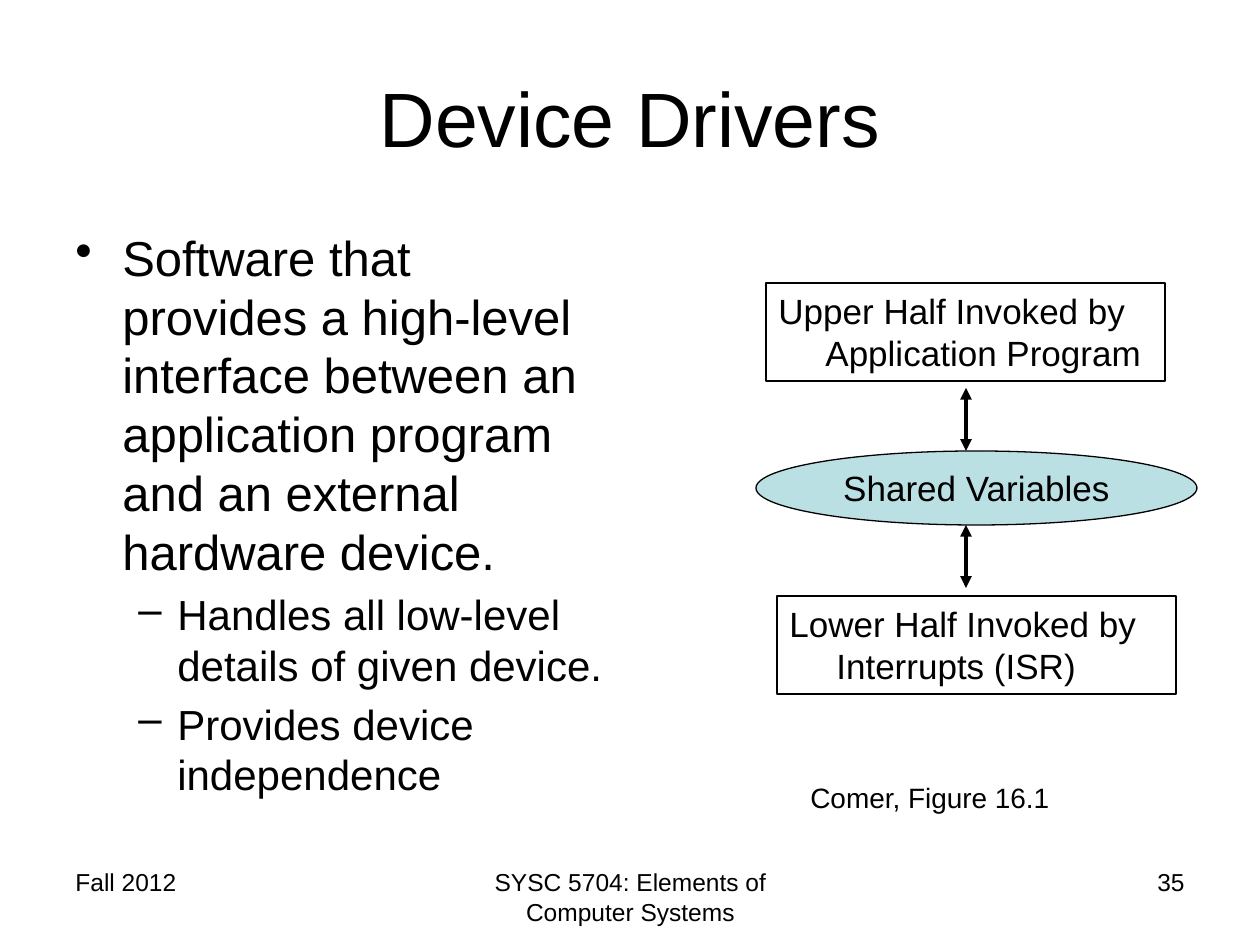
"""Build the Device Drivers slide: bullets beside a driver structure diagram."""
import pptx
import pptx.util
import pptx.dml.color
import pptx.enum.shapes
import pptx.enum.text
import pptx.oxml
import pptx.oxml.ns
from lxml import etree

PX = 914400 / 126
SHAPE = pptx.enum.shapes.MSO_SHAPE
ALIGN = pptx.enum.text.PP_ALIGN
ANCHOR = pptx.enum.text.MSO_ANCHOR
qn = pptx.oxml.ns.qn


def rgb(value):
    return pptx.dml.color.RGBColor.from_string(value)


def write(sp, paragraphs, align=ALIGN.LEFT, anchor=ANCHOR.TOP, wrap=True):
    tf = sp.text_frame
    tf.word_wrap = wrap
    tf.vertical_anchor = anchor
    for i, (text, size, left, hang, bullet, before) in enumerate(paragraphs):
        p = tf.add_paragraph() if i else tf.paragraphs[0]
        p.text = text
        p.alignment = align
        p.space_before = pptx.util.Pt(before)
        p.font.name = "Arial"
        p.font.size = pptx.util.Pt(size)
        p.font.color.rgb = rgb("000000")
        pPr = p._p.get_or_add_pPr()
        pPr.set("marL", str(int(left * PX)))
        pPr.set("indent", str(int(-hang * PX)))
        if bullet:
            bu = etree.Element(qn("a:buChar"), char=bullet)
            pPr.find(qn("a:defRPr")).addprevious(bu)


prs = pptx.Presentation()
prs.slide_width = int(1260 * PX)
prs.slide_height = int(945 * PX)
s = prs.slides.add_slide(prs.slide_layouts[6])

texts = [
    ((63, 861, 294, 66), [("Fall 2012", 14, 0, 0, "", 0)], ALIGN.LEFT, ANCHOR.TOP, True),
    ((431, 861, 399, 66), [("SYSC 5704: Elements of Computer Systems", 14, 0, 0, "", 0)],
     ALIGN.CENTER, ANCHOR.TOP, True),
    ((903, 861, 294, 66), [("35", 14, 0, 0, "", 0)], ALIGN.RIGHT, ANCHOR.TOP, True),
    ((63, 38, 1134, 158), [("Device Drivers", 44, 0, 0, "", 0)],
     ALIGN.CENTER, ANCHOR.MIDDLE, True),
    ((63, 221, 557, 624), [
        ("Software that provides a high-level interface between an application program "
         "and an external hardware device.", 28, 47, 47, "•", 0),
        ("Handles all low-level details of given device.", 24, 102, 39, "–", 5),
        ("Provides device independence", 24, 102, 39, "–", 5),
    ], ALIGN.LEFT, ANCHOR.TOP, True),
    ((798, 774, 267, 47), [("Comer, Figure 16.1", 16, 47, 47, "", 0)],
     ALIGN.LEFT, ANCHOR.TOP, False),
]
for box, paragraphs, align, anchor, wrap in texts:
    sp = s.shapes.add_textbox(*(int(v * PX) for v in box))
    write(sp, paragraphs, align, anchor, wrap)

blocks = [
    (SHAPE.RECTANGLE, (766, 283, 399, 98), "Upper Half Invoked by Application Program",
     None, ALIGN.LEFT, ANCHOR.TOP),
    (SHAPE.RECTANGLE, (777, 596, 399, 98), "Lower Half Invoked by Interrupts (ISR)",
     None, ALIGN.LEFT, ANCHOR.TOP),
    (SHAPE.OVAL, (756, 451, 441, 74), "Shared Variables",
     "BBE0E3", ALIGN.CENTER, ANCHOR.MIDDLE),
]
for kind, box, text, fill, align, anchor in blocks:
    sp = s.shapes.add_shape(kind, *(int(v * PX) for v in box))
    sp.shadow.inherit = False
    if fill:
        sp.fill.solid()
        sp.fill.fore_color.rgb = rgb(fill)
    else:
        sp.fill.background()
    sp.line.color.rgb = rgb("000000")
    sp.line.width = pptx.util.Pt(0.75)
    write(sp, [(text, 20, 47, 47, "", 0)], align, anchor)

for top in (388, 525):
    line = s.shapes.add_connector(
        pptx.enum.shapes.MSO_CONNECTOR.STRAIGHT,
        *(int(v * PX) for v in (966, top, 966, top + 63)))
    line.line.color.rgb = rgb("000000")
    line.line.width = pptx.util.Pt(2.25)
    ln = line.line._get_or_add_ln()
    for end in ("a:headEnd", "a:tailEnd"):
        etree.SubElement(ln, qn(end), type="triangle")
    etree.SubElement(line._element.spPr, qn("a:effectLst"))

prs.save("out.pptx")
